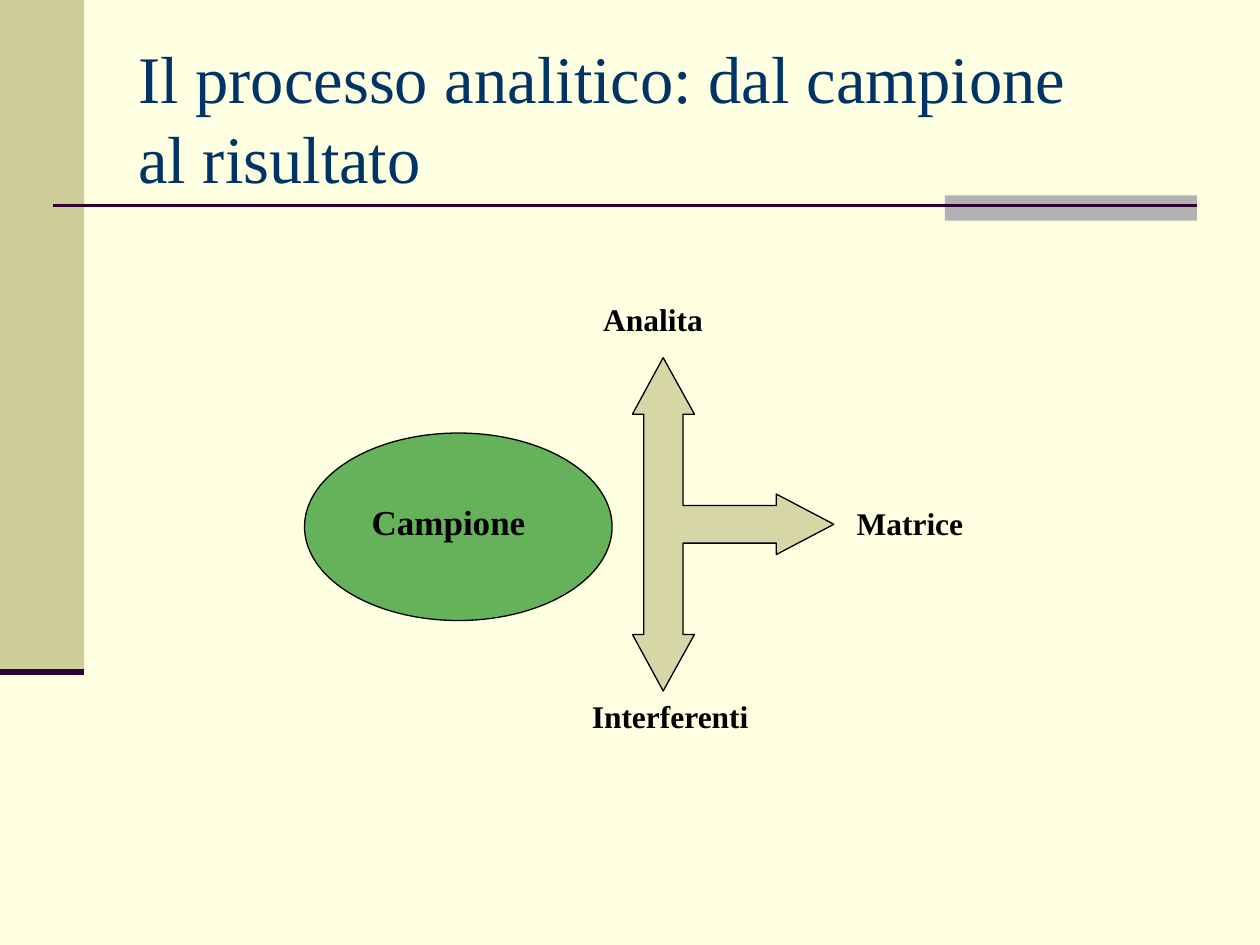
from pptx import Presentation
from pptx.dml.color import RGBColor
from pptx.enum.shapes import MSO_CONNECTOR as Connector, MSO_SHAPE as Shape
from pptx.enum.text import MSO_ANCHOR as Anchor, MSO_AUTO_SIZE as AutoSize
from pptx.oxml.ns import qn
from pptx.util import Cm, Pt
from lxml import etree

CREAM = RGBColor(0xFF, 0xFF, 0xE1)
KHAKI = RGBColor(0xCC, 0xCC, 0x99)
GREY = RGBColor(0xB2, 0xB2, 0xB2)
PLUM = RGBColor(0x33, 0x00, 0x33)
NAVY = RGBColor(0x00, 0x33, 0x66)
GREEN = RGBColor(0x00, 0x80, 0x00)
BLACK = RGBColor(0x00, 0x00, 0x00)

deck = Presentation()
deck.slide_width, deck.slide_height = Cm(25.4), Cm(19.05)
page = deck.slides.add_slide(deck.slide_layouts[6])
page.background.fill.solid()
page.background.fill.fore_color.rgb = CREAM


def write(text, *, at, size=18, color=BLACK, bold=True, wrap=False,
          fit=AutoSize.SHAPE_TO_FIT_TEXT, anchor=Anchor.TOP):
    box = page.shapes.add_textbox(*map(Cm, at))
    frame = box.text_frame
    frame.word_wrap, frame.auto_size, frame.vertical_anchor = wrap, fit, anchor
    para = frame.paragraphs[0]
    para.text = text
    for span in para.runs:
        span.font.name, span.font.size = "Times New Roman", Pt(size)
        span.font.bold, span.font.color.rgb = bold, color


def paint(shape, color, opacity=100, outlined=False):
    shape.shadow.inherit = False
    shape.fill.solid()
    shape.fill.fore_color.rgb = color
    if opacity < 100:
        tint = shape.fill._xPr.find(qn("a:solidFill"))[0]
        etree.SubElement(tint, qn("a:alpha"), val=str(opacity * 1000))
    if outlined:
        shape.line.color.rgb = BLACK
        shape.line.width = Pt(0.75)
    else:
        shape.line.fill.background()


for at, color in [((0, 0, 1.7, 13.54), KHAKI), ((19.05, 3.94, 5.08, 0.51), GREY)]:
    paint(page.shapes.add_shape(Shape.RECTANGLE, *map(Cm, at)), color)

for left, right, height, width in [(1.07, 24.13, 4.14, 1.5), (0, 1.7, 13.54, 3.5)]:
    rule = page.shapes.add_connector(
        Connector.STRAIGHT, Cm(left), Cm(height), Cm(right), Cm(height))
    rule.line.color.rgb = PLUM
    rule.line.width = Pt(width)
    etree.SubElement(rule._element.spPr, qn("a:effectLst"))

write("Il processo analitico: dal campione\val risultato",
      at=(2.54, 0.76, 21.59, 3.18), size=38, color=NAVY, bold=False, wrap=True,
      fit=AutoSize.NONE, anchor=Anchor.MIDDLE)

sample = page.shapes.add_shape(Shape.OVAL, Cm(6.14), Cm(8.73), Cm(6.2), Cm(3.78))
paint(sample, GREEN, opacity=60, outlined=True)
write("Campione", at=(7.24, 9.97, 3.81, 1.09), size=20, wrap=True)

axis = 10.57
upper_half = [(12.98, 2.22), (12.75, 2.22), (13.37, 3.36), (14, 2.22), (13.77, 2.22),
              (13.77, 0.38), (15.65, 0.38), (15.65, 0.61)]
outline = [(x, axis - rise) for x, rise in upper_half]
outline.append((16.81, axis))
outline += [(x, axis + rise) for x, rise in reversed(upper_half)]
points = [(Cm(x), Cm(y)) for x, y in outline]
builder = page.shapes.build_freeform(*points[0])
builder.add_line_segments(points[1:], close=True)
paint(builder.convert_to_shape(), KHAKI, opacity=80, outlined=True)

for label, left, top, width in [("Analita", 11.91, 5.92, 2.6),
                                ("Matrice", 17.02, 10.03, 2.7),
                                ("Interferenti", 11.68, 13.92, 3.7)]:
    write(label, at=(left, top, width, 1.02))

deck.save("out.pptx")
